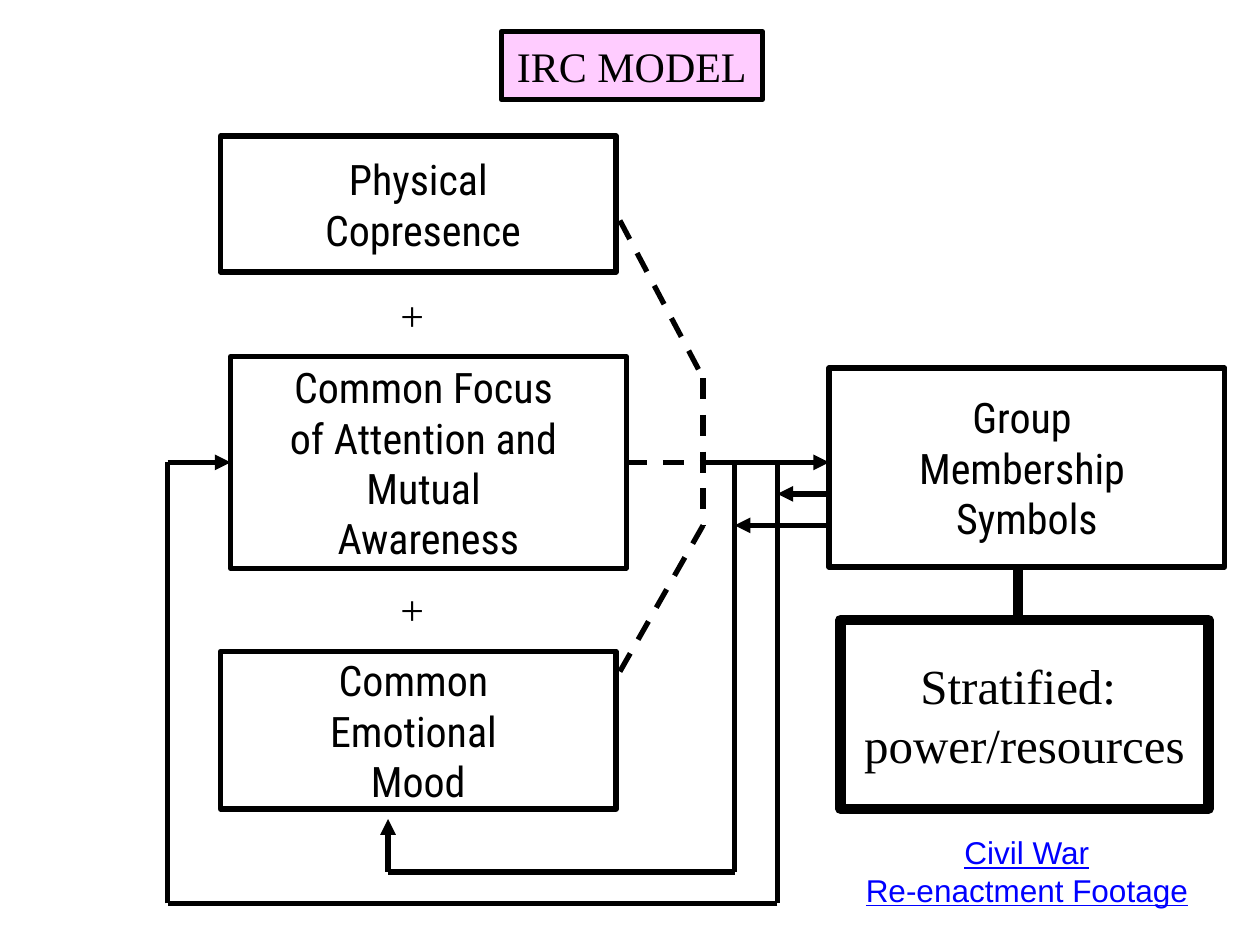
from dataclasses import dataclass
from itertools import pairwise

from lxml.etree import SubElement
from pptx import Presentation
from pptx.dml.color import RGBColor as RGB
from pptx.enum.dml import MSO_LINE_DASH_STYLE as Dash
from pptx.enum.shapes import MSO_CONNECTOR as Link, MSO_SHAPE as Kind
from pptx.enum.text import MSO_ANCHOR as Anchor, PP_ALIGN as Align
from pptx.oxml.ns import qn
from pptx.util import Inches, Pt


@dataclass(frozen=True)
class Theme:
    ink: RGB = RGB(0, 0, 0)
    paper: RGB = RGB(255, 255, 255)
    pink: RGB = RGB(255, 204, 255)
    blue: RGB = RGB(0, 0, 255)
    sans: str = "Roboto Condensed"
    serif: str = "Times New Roman"
    plain: str = "Arial"
    text: int = 24
    large: int = 28
    small: int = 18
    thin: int = 3
    thick: int = 6


THEME = Theme()
MID = 3.67
JOIN = 5.58
INNER = 5.83
OUTER = 6.17
GROUP = 6.58


def place(shape, left, top, width, height):
    shape.left, shape.top = Inches(left), Inches(top)
    shape.width, shape.height = Inches(width), Inches(height)


def write(shape, text, font, size, color=THEME.ink, align=Align.CENTER,
          anchor=Anchor.MIDDLE, under=None):
    frame = shape.text_frame
    frame.text = text
    frame.word_wrap = False
    frame.vertical_anchor = anchor
    for para in frame.paragraphs:
        para.alignment = align
        for run in para.runs:
            face = run.font
            face.name, face.size = font, Pt(size)
            face.color.rgb = color
            face.underline = under


def paint(shape, fill, width):
    shape.fill.solid()
    shape.fill.fore_color.rgb = fill
    shape.line.color.rgb = THEME.ink
    shape.line.width = Pt(width)


def add_box(slide, area, text, font=THEME.sans, size=THEME.text,
            width=THEME.thin):
    box = slide.shapes.add_shape(Kind.RECTANGLE, *map(Inches, area))
    box.shadow.inherit = False
    paint(box, THEME.paper, width)
    write(box, text, font, size)
    return box


def add_label(slide, area, text, font, size, **look):
    label = slide.shapes.add_textbox(*map(Inches, area))
    write(label, text, font, size, anchor=Anchor.TOP, **look)


def add_line(slide, start, end, width=THEME.thin, dash=False, arrow=False):
    line = slide.shapes.add_connector(Link.STRAIGHT, *map(Inches, start + end))
    line.line.color.rgb = THEME.ink
    line.line.width = Pt(width)
    if dash:
        line.line.dash_style = Dash.DASH
    if arrow:
        SubElement(line.line._get_or_add_ln(), qn("a:tailEnd"), type="triangle")
    SubElement(line._element.spPr, qn("a:effectLst"))
    return line


def add_route(slide, points, dash=False, arrow=False):
    legs = list(pairwise(points))
    lines = [add_line(slide, *leg, dash=dash) for leg in legs[:-1]]
    return lines + [add_line(slide, *legs[-1], dash=dash, arrow=arrow)]


def add_title(slide):
    title = slide.shapes.title
    place(title, 3.98, 0.25, 2.07, 0.54)
    paint(title, THEME.pink, THEME.thin)
    write(title, "IRC MODEL", THEME.serif, THEME.text)


def add_boxes(slide):
    add_box(slide, (1.75, 1.08, 3.14, 1.08), "Physical\n Copresence")
    add_box(slide, (1.75, 5.17, 3.14, 1.25), "Common \nEmotional \nMood")
    focus = add_box(slide, (1.83, 2.83, 3.14, 1.68),
                    "Common Focus \nof Attention and \nMutual \nAwareness")
    add_box(slide, (GROUP, 2.92, 3.14, 1.58), "Group \nMembership \nSymbols")
    add_box(slide, (6.67, 4.92, 2.92, 1.5), "Stratified: \npower/resources",
            THEME.serif, THEME.large, THEME.thick)
    return focus


def add_flows(slide, focus):
    add_route(slide, [(4.92, 1.75), (JOIN, 3), (JOIN, 4.17), (4.92, 5.33)],
              dash=True)
    feed = add_line(slide, (4.97, MID), (JOIN, MID), dash=True)
    feed.begin_connect(focus, 3)
    add_line(slide, (JOIN, MID), (GROUP, MID), arrow=True)
    add_route(slide, [(INNER, MID), (INNER, 6.92), (3.08, 6.92), (3.08, 6.5)],
              arrow=True)
    loop = add_route(slide, [(OUTER, MID), (OUTER, 7.17), (1.33, 7.17),
                             (1.33, MID), (1.83, MID)], arrow=True)
    loop[-1].end_connect(focus, 1)
    for end, y in ((OUTER, 3.92), (INNER, 4.17)):
        add_line(slide, (GROUP, y), (end, y), arrow=True)
    add_line(slide, (8.08, 4.5), (8.08, 4.92), THEME.thick)


def main():
    deck = Presentation()
    deck.slide_width, deck.slide_height = Inches(10), Inches(7.5)
    slide = deck.slides.add_slide(deck.slide_layouts[5])
    add_title(slide)
    focus = add_boxes(slide)
    for top in (2.25, 4.58):
        add_label(slide, (3.08, top, 0.39, 0.5), "+", THEME.serif, THEME.text,
                  align=Align.LEFT)
    add_flows(slide, focus)
    add_label(slide, (6.76, 6.56, 2.78, 0.71),
              "Civil War\nRe-enactment Footage", THEME.plain, THEME.small,
              color=THEME.blue, under=True)
    deck.save("out.pptx")


if __name__ == "__main__":
    main()
